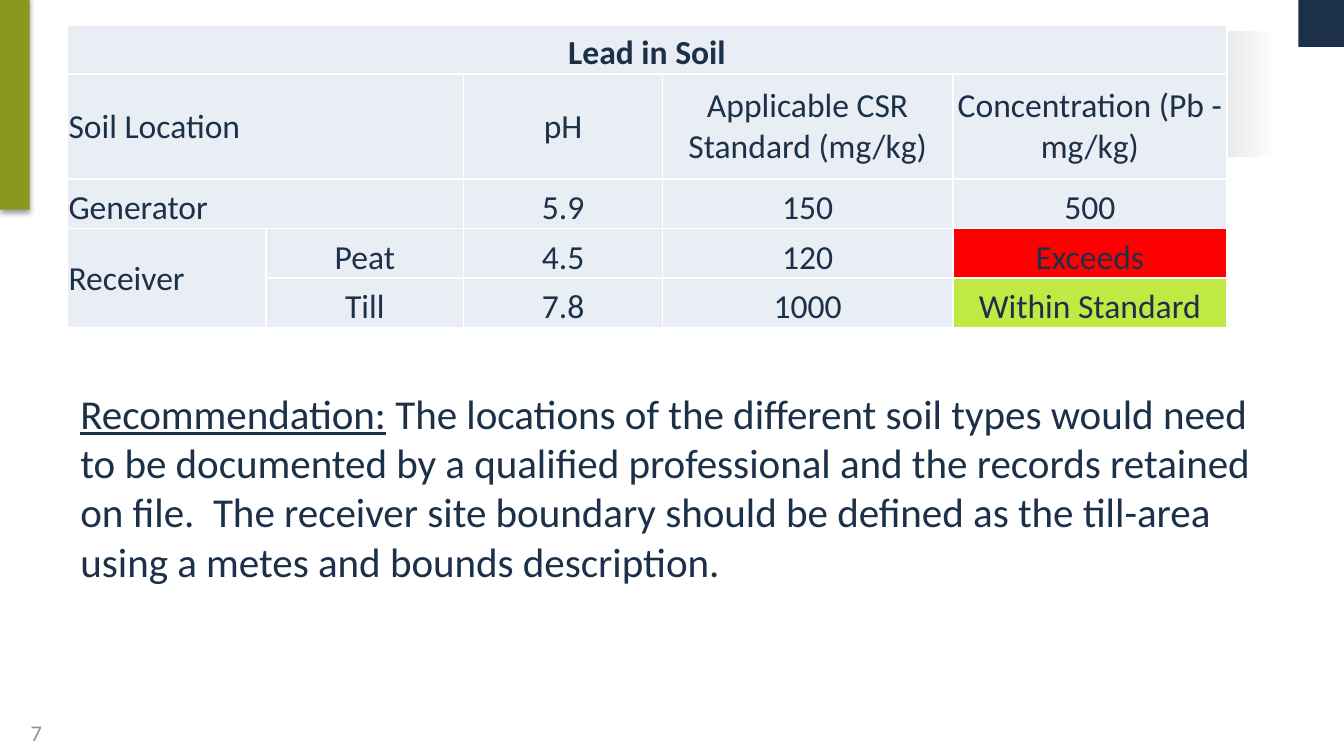
from lxml import etree
from pptx import Presentation
from pptx.dml.color import RGBColor
from pptx.enum.shapes import MSO_SHAPE
from pptx.enum.text import MSO_ANCHOR, PP_ALIGN
from pptx.oxml import parse_xml
from pptx.oxml.ns import nsdecls, qn
from pptx.util import Inches, Pt

RECTANGLE = MSO_SHAPE.RECTANGLE
TOP, MIDDLE, BOTTOM = MSO_ANCHOR.TOP, MSO_ANCHOR.MIDDLE, MSO_ANCHOR.BOTTOM
LEFT, CENTER = PP_ALIGN.LEFT, PP_ALIGN.CENTER

FONT = "Calibri"
COLORS = {
    "navy": "1C3149",
    "olive": "8A9720",
    "gray": "8D9095",
    "white": "FFFFFF",
    "cell": "E9EDF4",
    "exceeds": "FF0000",
    "within": "C0EA43",
}

COLUMN_WIDTHS = [1.48, 1.47, 1.48, 2.16, 2.04]
ROW_HEIGHTS = [0.36, 0.78, 0.37, 0.37, 0.37]
ROWS = [
    ["Lead in Soil", "", "", "", ""],
    ["Soil Location", "", "pH", "Applicable CSR Standard (mg/kg)",
     "Concentration (Pb - mg/kg)"],
    ["Generator", "", "5.9", "150", "500"],
    ["Receiver", "Peat", "4.5", "120", "Exceeds"],
    ["", "Till", "7.8", "1000", "Within Standard"],
]
MERGES = [((0, 0), (0, 4)), ((1, 0), (1, 1)), ((2, 0), (2, 1)), ((3, 0), (4, 0))]
RESULT_FILLS = {"Exceeds": "exceeds", "Within Standard": "within"}


def rgb(name):
    return RGBColor.from_string(COLORS[name])


class SoilPage:
    def __init__(self, deck):
        self.page = deck.slides.add_slide(deck.slide_layouts[6])

    def style(self, para, size, color, bold=False):
        para.font.name = FONT
        para.font.size = Pt(size)
        para.font.bold = bold
        para.font.color.rgb = rgb(color)

    def block(self, left, top, width, height, color):
        shape = self.page.shapes.add_shape(
            RECTANGLE, Inches(left), Inches(top), Inches(width), Inches(height))
        shape.shadow.inherit = False
        shape.line.fill.background()
        shape.fill.solid()
        shape.fill.fore_color.rgb = rgb(color)
        return shape

    def fade(self, shape, start, end):
        shape.fill.gradient()
        shape.fill.gradient_angle = 0
        for stop, (position, color) in zip(shape.fill.gradient_stops, (start, end)):
            stop.position = position
            stop.color.rgb = rgb(color)

    def drop_shadow(self, shape):
        effects = shape._element.spPr.find(qn("a:effectLst"))
        effects.append(parse_xml(
            f'<a:outerShdw {nsdecls("a")} blurRad="{Pt(3.1)}" dist="{Pt(1.6)}" '
            'dir="5400000" rotWithShape="0"><a:srgbClr val="000000">'
            '<a:alpha val="38000"/></a:srgbClr></a:outerShdw>'))

    def text(self, left, top, width, height, spans, size, color, anchor=TOP):
        box = self.page.shapes.add_textbox(
            Inches(left), Inches(top), Inches(width), Inches(height))
        frame = box.text_frame
        frame.word_wrap = True
        frame.vertical_anchor = anchor
        para = frame.paragraphs[0]
        for words, underlined in spans:
            span = para.add_run()
            span.text = words
            if underlined:
                span.font.underline = True
        self.style(para, size, color)

    def borders(self, cell):
        properties = cell._tc.get_or_add_tcPr()
        for side in ("lnL", "lnR", "lnT", "lnB"):
            line = etree.SubElement(properties, qn(f"a:{side}"), w=str(Pt(1)))
            fill = etree.SubElement(line, qn("a:solidFill"))
            etree.SubElement(fill, qn("a:srgbClr"), val=COLORS["white"])

    def cell(self, cell, words, align, anchor, bold):
        cell.margin_left = cell.margin_right = cell.margin_top = Inches(0.01)
        cell.margin_bottom = 0
        cell.vertical_anchor = anchor
        self.borders(cell)
        cell.fill.solid()
        cell.fill.fore_color.rgb = rgb(RESULT_FILLS.get(words, "cell"))
        para = cell.text_frame.paragraphs[0]
        para.text = words
        para.alignment = align
        self.style(para, 18, "navy", bold)

    def table(self, left, top):
        table = self.page.shapes.add_table(
            len(ROWS), len(COLUMN_WIDTHS), Inches(left), Inches(top),
            Inches(sum(COLUMN_WIDTHS)), Inches(sum(ROW_HEIGHTS))).table
        table.first_row = table.horz_banding = False
        for column, width in zip(table.columns, COLUMN_WIDTHS):
            column.width = Inches(width)
        for row, height in zip(table.rows, ROW_HEIGHTS):
            row.height = Inches(height)
        for start, end in MERGES:
            table.cell(*start).merge(table.cell(*end))
        for r, row in enumerate(ROWS):
            for c, words in enumerate(row):
                align = LEFT if c == 0 and r > 0 else CENTER
                anchor = MIDDLE if r == 1 or words == "Receiver" else BOTTOM
                self.cell(table.cell(r, c), words, align, anchor, r == 0)


def main():
    deck = Presentation()
    deck.slide_width = Inches(10)
    deck.slide_height = deck.slide_width * 9 // 16
    soil = SoilPage(deck)

    soil.text(0.13, 5.3, 0.51, 0.3, [("7", False)], 12, "gray", MIDDLE)
    title_band = soil.block(0.5, 0.23, 9, 0.94, "navy")
    soil.fade(title_band, (0.64, "navy"), (1, "white"))
    side_bar = soil.block(0, -0.03, 0.22, 1.59, "olive")
    soil.drop_shadow(side_bar)
    soil.block(9.66, -0.03, 0.42, 0.38, "navy")

    soil.text(0.5, 2.84, 9, 2.18, [
        ("Recommendation:", True),
        (" The locations of the different soil types would need to be documented "
         "by a qualified professional and the records retained on file.  The "
         "receiver site boundary should be defined as the till-area using a metes "
         "and bounds description.", False),
    ], 22, "navy")
    soil.table(0.5, 0.19)

    deck.save("out.pptx")


if __name__ == "__main__":
    main()
